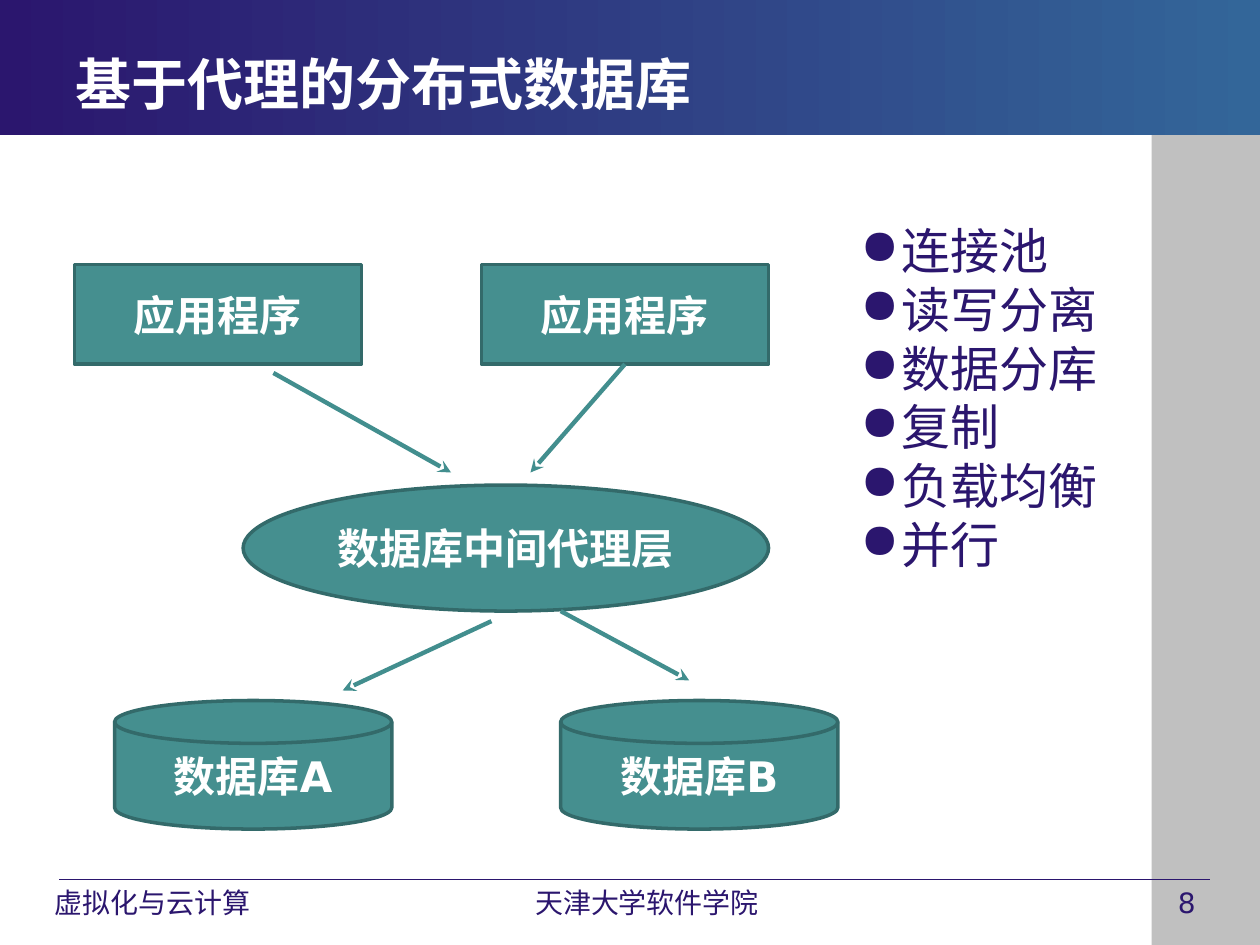
from dataclasses import dataclass
from lxml import etree
from pptx import Presentation
from pptx import util as u
from pptx.dml.color import RGBColor
from pptx.enum import shapes, text
from pptx.oxml import ns


@dataclass(frozen=True)
class Theme:
    navy: str = "2B166E"
    blue: str = "336699"
    gray: str = "C0C0C0"
    white: str = "FFFFFF"
    teal: str = "458F8F"
    edge: str = "336A6A"
    arrow: str = "428E8E"
    font: str = "DejaVu Sans"
    plain: str = "Arial"
    title: int = 32
    list: int = 28
    node: int = 24
    foot: int = 16


KIND = shapes.MSO_SHAPE
LEFT, MID = text.PP_ALIGN.LEFT, text.PP_ALIGN.CENTER


class Deck:
    """Places elements on a grid of 100 columns by 75 rows."""

    def __init__(self, theme):
        self.theme = theme
        self.prs = Presentation()
        self.prs.slide_width, self.prs.slide_height = u.Inches(10), u.Inches(7.5)
        self.slide = self.prs.slides.add_slide(self.prs.slide_layouts[6])

    def grid(self, *cells):
        sides = (self.prs.slide_width / 100, self.prs.slide_height / 75)
        return [round(c * sides[i % 2]) for i, c in enumerate(cells)]

    def style(self, par, size, color, bold=False, font=None, align=LEFT):
        par.alignment = align
        for run in par.runs:
            run.font.size = u.Pt(size)
            run.font.bold = bold
            run.font.name = font or self.theme.font
            run.font.color.rgb = RGBColor.from_string(color)

    def panel(self, kind, box, fill, edge=None):
        item = self.slide.shapes.add_shape(kind, *self.grid(*box))
        item.shadow.inherit = False
        item.fill.solid()
        item.fill.fore_color.rgb = RGBColor.from_string(fill)
        if edge:
            item.line.color.rgb = RGBColor.from_string(edge)
            item.line.width = u.Pt(2)
        else:
            item.line.fill.background()
        return item

    def banner(self, box, *colors):
        fill = self.panel(KIND.RECTANGLE, box, colors[0]).fill
        fill.gradient()
        fill.gradient_angle = 0
        for i, (stop, color) in enumerate(zip(fill.gradient_stops, colors)):
            stop.position = i
            stop.color.rgb = RGBColor.from_string(color)

    def node(self, kind, box, label):
        item = self.panel(kind, box, self.theme.teal, self.theme.edge)
        frame = item.text_frame
        frame.text = label
        frame.vertical_anchor = text.MSO_ANCHOR.MIDDLE
        self.style(frame.paragraphs[0], self.theme.node, self.theme.white, True, align=MID)
        return item

    def line(self, start, end, color, width, head=False, source=None):
        item = self.slide.shapes.add_connector(
            shapes.MSO_CONNECTOR.STRAIGHT, *self.grid(*start, *end))
        if source is not None:
            item.begin_connect(source, 2)
        item.line.color.rgb = RGBColor.from_string(color)
        item.line.width = u.Pt(width)
        if head:
            etree.SubElement(item.line._get_or_add_ln(), ns.qn("a:tailEnd"), type="stealth")
        etree.SubElement(item._element.spPr, ns.qn("a:effectLst"))

    def label(self, box, words, size, color, anchor=text.MSO_ANCHOR.TOP, **look):
        frame = self.slide.shapes.add_textbox(*self.grid(*box)).text_frame
        frame.word_wrap = True
        frame.vertical_anchor = anchor
        frame.text = words
        for par in frame.paragraphs:
            self.style(par, size, color, **look)
        return frame

    def bullets(self, box, items):
        frame = self.label(box, "\n".join(items), self.theme.list,
                           self.theme.navy, font=self.theme.plain)
        indent = self.grid(3.3)[0]
        for par in frame.paragraphs:
            props = par._p.get_or_add_pPr()
            props.set("marL", str(indent))
            props.set("indent", str(-indent))
            etree.SubElement(props, ns.qn("a:buChar"), char="●")


def main():
    theme = Theme()
    deck = Deck(theme)

    # Frame and footer
    deck.panel(KIND.RECTANGLE, (91.4, 10.7, 8.6, 64.3), theme.gray)
    deck.line((4.7, 69.8), (96, 69.8), theme.navy, 0.75)
    deck.banner((0, 0, 100, 10.7), theme.navy, theme.blue)
    for left, width, words, align in (
            (92.5, 7.1, "8", LEFT),
            (2.4, 19.4, "虚拟化与云计算", MID),
            (40.1, 22.5, "天津大学软件学院", MID)):
        deck.label((left, 69.8, width, 3.5), words, theme.foot, theme.navy, align=align)

    # Title
    deck.label((5, 3.5, 67.5, 6.2), "基于代理的分布式数据库", theme.title,
               theme.white, text.MSO_ANCHOR.MIDDLE, bold=True)

    # Applications, proxy layer, databases
    deck.node(KIND.OVAL, (19.3, 38.5, 41.7, 10), "数据库中间代理层")
    apps = [deck.node(KIND.RECTANGLE, (left, 21, 22.8, 7.9), "应用程序")
            for left in (5.9, 38.2)]
    for left, name in ((9.1, "A"), (44.5, "B")):
        deck.node(KIND.FLOWCHART_MAGNETIC_DISK, (left, 55.6, 22, 10.2), "数据库" + name)

    # Arrows
    for start, end, source in (
            ((21.7, 29.6), (35.8, 37.5), None),
            ((49.6, 28.9), (42.1, 37.5), apps[1]),
            ((39, 49.3), (27.2, 54.8), None),
            ((44.5, 48.5), (54.7, 54), None)):
        deck.line(start, end, theme.arrow, 2.5, True, source)

    # Features
    deck.bullets((67.3, 17, 22.8, 29.3),
                 ["连接池", "读写分离", "数据分库", "复制", "负载均衡", "并行"])

    deck.prs.save("out.pptx")


if __name__ == "__main__":
    main()
